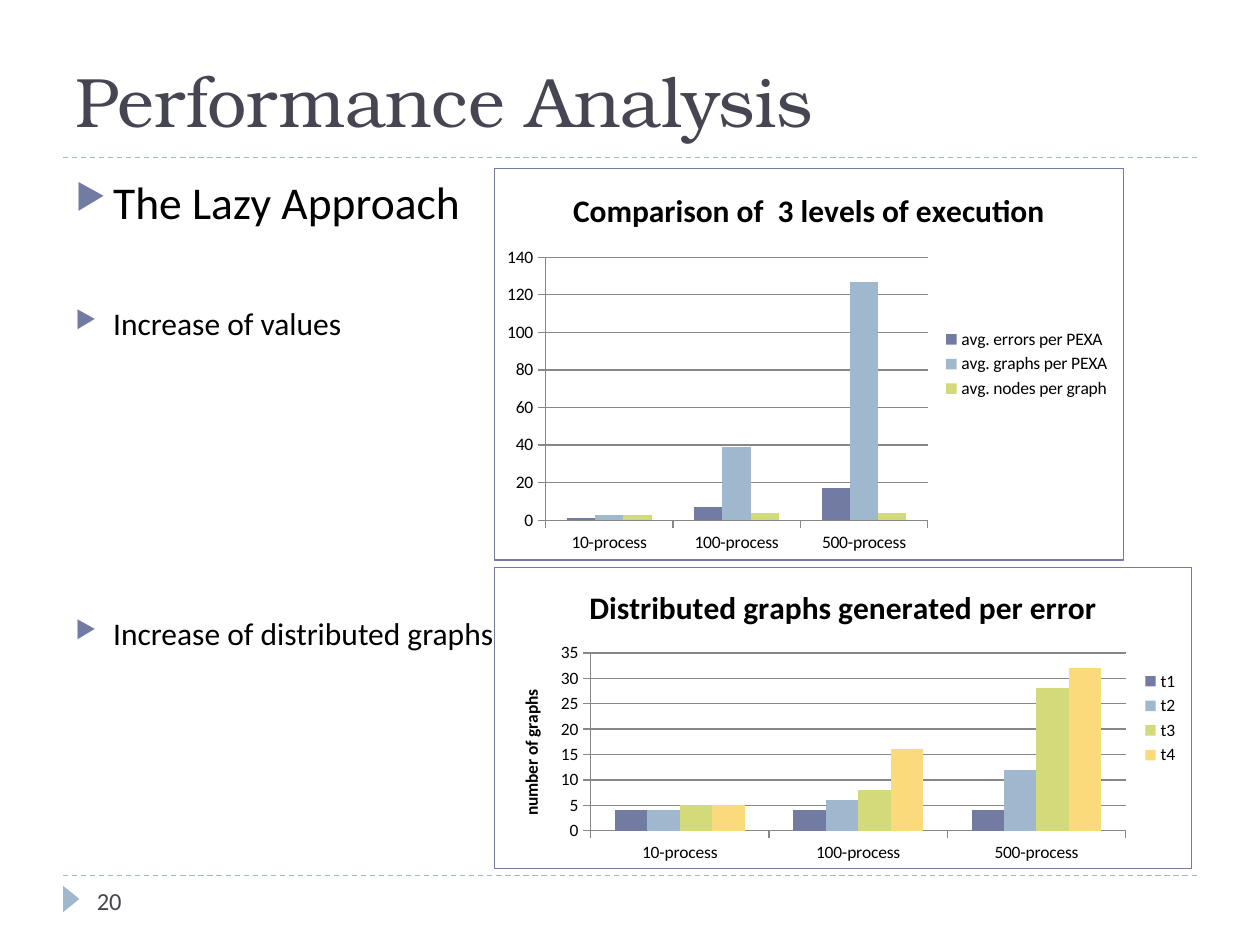
from lxml import etree
from pptx import Presentation
from pptx.chart.data import CategoryChartData
from pptx.dml.color import RGBColor
from pptx.enum.chart import XL_CHART_TYPE, XL_LEGEND_POSITION, XL_TICK_MARK
from pptx.enum.dml import MSO_LINE
from pptx.enum.shapes import MSO_CONNECTOR, MSO_SHAPE
from pptx.enum.text import MSO_ANCHOR
from pptx.oxml import parse_xml
from pptx.oxml.ns import nsdecls, qn
from pptx.util import Inches, Pt

COLUMN = XL_CHART_TYPE.COLUMN_CLUSTERED
RIGHT = XL_LEGEND_POSITION.RIGHT
OUTSIDE = XL_TICK_MARK.OUTSIDE
DASH = MSO_LINE.DASH
STRAIGHT = MSO_CONNECTOR.STRAIGHT
TRIANGLE = MSO_SHAPE.ISOSCELES_TRIANGLE
TOP, MIDDLE, BOTTOM = MSO_ANCHOR.TOP, MSO_ANCHOR.MIDDLE, MSO_ANCHOR.BOTTOM

COLORS = {
    "title": "464653", "text": "000000", "grid": "878787",
    "indigo": "727CA3", "blue": "9FB8CD", "green": "D2DA7A", "yellow": "FADA7A",
}
SERIES_COLORS = ["indigo", "blue", "green", "yellow"]
BODY_FONT = "Calibri"
TITLE_FONT = "TeX Gyre Bonum"
CATEGORIES = ["10-process", "100-process", "500-process"]
LEVELS = {
    "avg. errors per PEXA": [1, 7, 17],
    "avg. graphs per PEXA": [3, 39, 127],
    "avg. nodes per graph": [3, 4, 4],
}
GRAPHS = {
    "t1": [4, 4, 4], "t2": [4, 6, 12],
    "t3": [5, 8, 28], "t4": [5, 16, 32],
}
BULLETS = [
    ("The Lazy Approach", 26, 6),
    ("Increase of values", 18, 43),
    ("Increase of distributed graphs", 18, 156),
]


def rgb(name):
    return RGBColor.from_string(COLORS[name])


def set_font(font, size, color="text", name=BODY_FONT, bold=False):
    font.size = Pt(size)
    font.name = name
    font.bold = bold
    font.color.rgb = rgb(color)


def add_text_frame(s, box, anchor):
    tf = s.shapes.add_textbox(*map(Inches, box)).text_frame
    tf.word_wrap = True
    tf.vertical_anchor = anchor
    return tf


def add_label(s, box, text, anchor, size, name):
    p = add_text_frame(s, box, anchor).paragraphs[0]
    p.text = text
    set_font(p.font, size, "title", name)


def add_rule(s, x, y, width):
    line = s.shapes.add_connector(
        STRAIGHT, Inches(x), Inches(y), Inches(x + width), Inches(y))
    line.line.color.rgb = rgb("blue")
    line.line.width = Pt(0.75)
    line.line.dash_style = DASH
    sp_pr = line._element.find(qn("p:spPr"))
    etree.SubElement(sp_pr, qn("a:effectLst"))


def add_bullet(p):
    p_pr = p._p.get_or_add_pPr()
    p_pr.set("marL", str(Inches(0.3)))
    p_pr.set("indent", str(Inches(-0.3)))
    color = etree.SubElement(p_pr, qn("a:buClr"))
    etree.SubElement(color, qn("a:srgbClr"), val=COLORS["indigo"])
    etree.SubElement(p_pr, qn("a:buSzPct"), val="76000")
    etree.SubElement(p_pr, qn("a:buChar"), char="▶")


def add_body(s, box):
    tf = add_text_frame(s, box, TOP)
    for i, (text, size, gap) in enumerate(BULLETS):
        p = tf.add_paragraph() if i else tf.paragraphs[0]
        p.text = text
        p.space_before = Pt(gap)
        add_bullet(p)
        set_font(p.font, size)


def set_heading(holder, text, size):
    p = holder.text_frame.paragraphs[0]
    p.text = text
    set_font(p.font, size, bold=True)


def add_border(chart):
    border = parse_xml(
        f'<c:spPr {nsdecls("c", "a")}><a:noFill/><a:ln w="{Pt(0.75)}"><a:solidFill>'
        f'<a:srgbClr val="{COLORS["indigo"]}"/></a:solidFill></a:ln></c:spPr>')
    chart._chartSpace.find(qn("c:chart")).addnext(border)


def add_column_chart(s, box, title, series, top, step, axis_title=None):
    data = CategoryChartData()
    data.categories = CATEGORIES
    for name, values in series.items():
        data.add_series(name, values)
    chart = s.shapes.add_chart(COLUMN, *map(Inches, box), data).chart
    set_font(chart.font, 10)
    add_border(chart)
    chart.has_title = True
    set_heading(chart.chart_title, title, 18)
    chart.chart_title.include_in_layout = False
    chart.has_legend = True
    chart.legend.position = RIGHT
    chart.legend.include_in_layout = False

    plot = chart.plots[0]
    plot.vary_by_categories = False
    plot.gap_width = 150
    plot.overlap = 0
    for sr, color in zip(plot.series, SERIES_COLORS):
        sr.format.fill.solid()
        sr.format.fill.fore_color.rgb = rgb(color)

    axis = chart.value_axis
    axis.minimum_scale, axis.maximum_scale, axis.major_unit = 0, top, step
    axis.has_major_gridlines = True
    for ax in (axis, chart.category_axis):
        ax.major_tick_mark = OUTSIDE
        ax.format.line.color.rgb = rgb("grid")
    axis.major_gridlines.format.line.color.rgb = rgb("grid")
    if axis_title:
        set_heading(axis.axis_title, axis_title, 10)


def add_footer(s, x, y, width):
    add_rule(s, x, y, width)
    sp = s.shapes.add_shape(
        TRIANGLE, Inches(x - 0.04), Inches(y + 0.12), Inches(0.21), Inches(0.13))
    sp.rotation = 90
    sp.shadow.inherit = False
    sp.fill.solid()
    sp.fill.fore_color.rgb = rgb("blue")
    sp.line.fill.background()
    add_label(s, (x + 0.17, y, 2.17, 0.4), "20", MIDDLE, 14, BODY_FONT)


def main():
    prs = Presentation()
    prs.slide_width, prs.slide_height = Inches(10), Inches(7.5)
    s = prs.slides.add_slide(prs.slide_layouts[6])
    add_footer(s, 0.5, 6.95, 9)
    add_rule(s, 0.5, 1.25, 9)
    add_body(s, (0.5, 1.33, 9, 5.58))
    add_label(s, (0.5, 0.25, 9, 0.92), "Performance Analysis", BOTTOM, 40, TITLE_FONT)
    add_column_chart(s, (3.92, 4.5, 5.54, 2.4), "Distributed graphs generated per error",
                     GRAPHS, 35, 5, "number of graphs")
    add_column_chart(s, (3.92, 1.33, 5, 3.12), "Comparison of  3 levels of execution",
                     LEVELS, 140, 20)
    prs.save("out.pptx")


if __name__ == "__main__":
    main()
